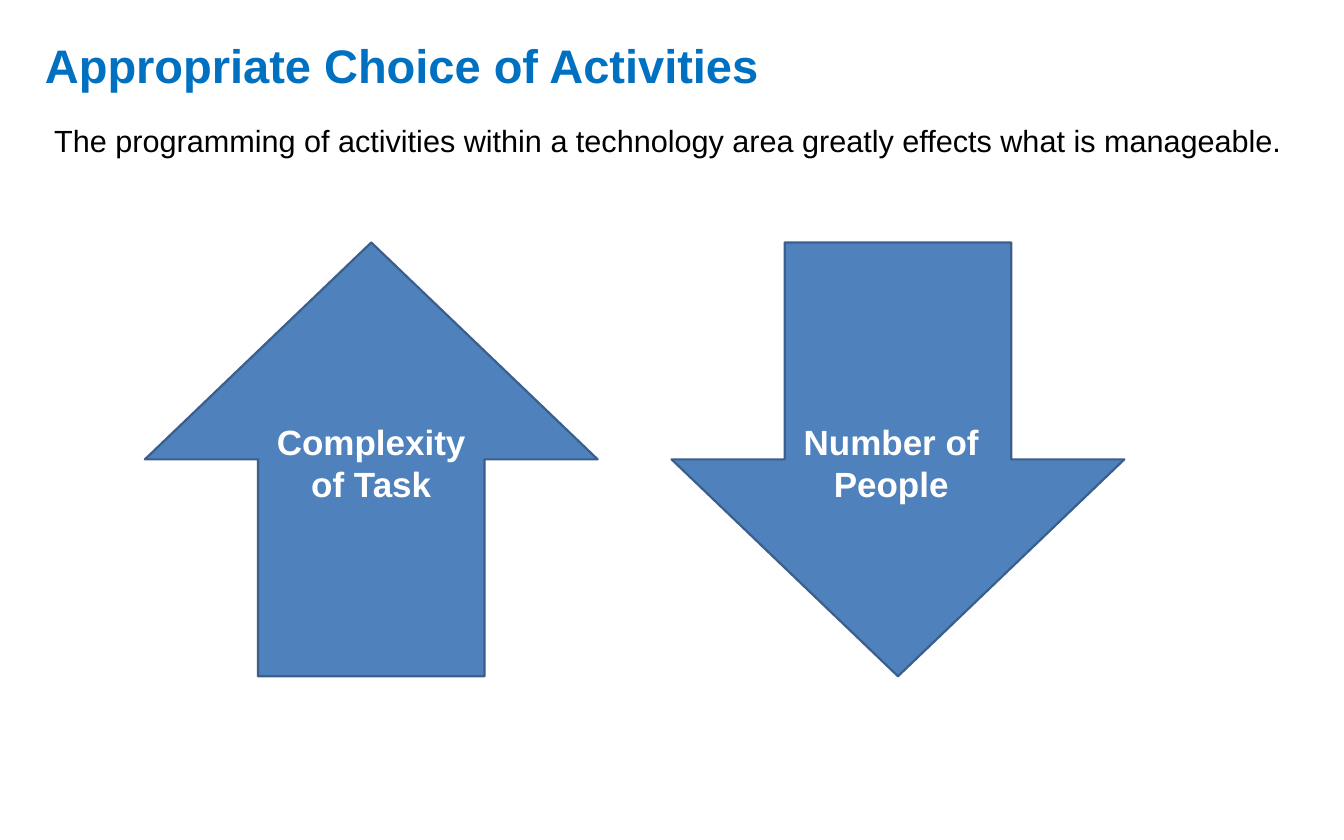
from pptx import Presentation
from pptx import util as u
from pptx.dml.color import RGBColor
from pptx.enum import shapes, text


def colour(hex_code):
    return RGBColor.from_string(hex_code)


class ActivitySlide:
    """Places elements by shares of the slide's width and height."""
    FONT = "Arial"
    BLUE, BLACK, WHITE = "0070C0", "000000", "FFFFFF"
    ARROW_FILL, ARROW_LINE = "4F81BD", "3A5F8C"

    def __init__(self, deck):
        self.width, self.height = deck.slide_width, deck.slide_height
        blank = deck.slide_layouts[6]
        self.slide = deck.slides.add_slide(blank)

    def place(self, left, top, width, height):
        """Turn percentages of the slide into lengths."""
        return (int(left * self.width / 100), int(top * self.height / 100),
                int(width * self.width / 100), int(height * self.height / 100))

    def words(self, area, lines, size, ink, bold=False, wrap=True,
              align=text.PP_ALIGN.LEFT, anchor=text.MSO_ANCHOR.TOP):
        frame = self.slide.shapes.add_textbox(*self.place(*area)).text_frame
        frame.word_wrap = wrap
        frame.vertical_anchor = anchor
        frame.text = "\n".join(lines)
        for paragraph in frame.paragraphs:
            paragraph.alignment = align
            font = paragraph.font
            font.name, font.size, font.bold = self.FONT, u.Pt(size), bold
            font.color.rgb = colour(ink)
        return frame

    def title(self, area, wording):
        frame = self.words(area, [wording], 43, self.BLUE, bold=True,
                           anchor=text.MSO_ANCHOR.BOTTOM)
        frame.margin_left = frame.margin_right = u.Inches(0.14)
        frame.margin_top = frame.margin_bottom = u.Inches(0.07)

    def arrow(self, kind, area):
        arrow = self.slide.shapes.add_shape(kind, *self.place(*area))
        arrow.shadow.inherit = False
        arrow.fill.solid()
        arrow.fill.fore_color.rgb = colour(self.ARROW_FILL)
        arrow.line.color.rgb = colour(self.ARROW_LINE)
        arrow.line.width = u.Pt(2)

    def label(self, area, lines):
        self.words(area, lines, 32, self.WHITE, bold=True, wrap=False,
                   align=text.PP_ALIGN.CENTER, anchor=text.MSO_ANCHOR.MIDDLE)


def main():
    deck = Presentation()
    deck.slide_width, deck.slide_height = u.Inches(17.07), u.Inches(10.67)
    page = ActivitySlide(deck)
    page.title((2.52, 3.37, 91.27, 8.34), "Appropriate Choice of Activities")
    page.words((3.46, 14.1, 93.2, 9.75),
               ["The programming of activities within a technology area "
                "greatly effects what is manageable."], 28, page.BLACK)

    arrow_width, arrow_step, label_width = 33.69, 39.19, 15.35
    trends = [
        (shapes.MSO_SHAPE.UP_ARROW, ["Complexity", "of Task"], 0),
        (shapes.MSO_SHAPE.DOWN_ARROW, ["Number of", "People"], -0.5),
    ]
    for column, (kind, lines, nudge) in enumerate(trends):
        left = 10.78 + column * arrow_step
        page.arrow(kind, (left, 28.87, arrow_width, 51.64))
        label_left = left + (arrow_width - label_width) / 2 + nudge
        page.label((label_left, 49.48, label_width, 11.06), lines)
    deck.save("out.pptx")


if __name__ == "__main__":
    main()
